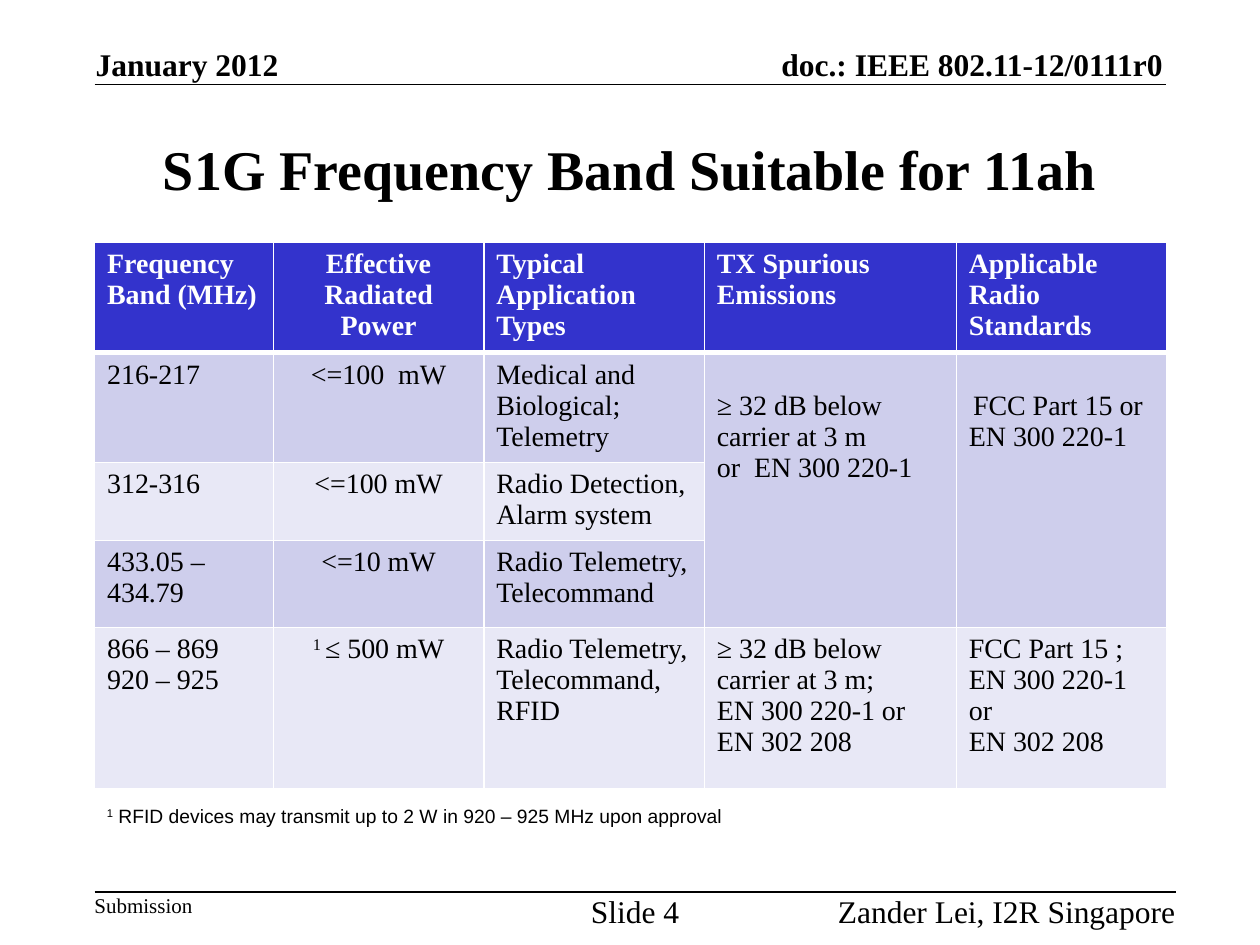
from lxml.etree import SubElement
from pptx import Presentation
from pptx.dml.color import RGBColor
from pptx.enum.shapes import MSO_CONNECTOR
from pptx.enum.text import MSO_ANCHOR, MSO_AUTO_SIZE, PP_ALIGN
from pptx.oxml.ns import qn
from pptx.util import Inches, Pt

COLORS = {"ink": "000000", "paper": "FFFFFF", "header": "3333CC",
          "odd": "CECEEC", "even": "E8E8F6"}
SERIF = "Times New Roman"
LEFT, CENTER, RIGHT = PP_ALIGN.LEFT, PP_ALIGN.CENTER, PP_ALIGN.RIGHT

BANDS = [
    ["Frequency Band (MHz)", "Effective Radiated Power", "Typical Application Types",
     "TX Spurious Emissions", "Applicable Radio Standards"],
    ["216-217", "<=100  mW", "Medical and Biological; Telemetry",
     "≥ 32 dB below carrier at 3 m\nor  EN 300 220-1", "FCC Part 15 or \nEN 300 220-1"],
    ["312-316", "<=100 mW", "Radio Detection, Alarm system", None, None],
    ["433.05 – 434.79", "<=10 mW", "Radio Telemetry, Telecommand", None, None],
    ["866 – 869\n920 – 925", ("1 ", "≤ 500 mW"), "Radio Telemetry, Telecommand, RFID",
     "≥ 32 dB below carrier at 3 m;\nEN 300 220-1 or\nEN 302 208",
     "FCC Part 15 ;\nEN 300 220-1 or\nEN 302 208"],
]
COLUMN_WIDTHS = [1.42, 1.67, 1.75, 2, 1.67]
ROW_HEIGHTS = [0.88, 0.87, 0.62, 0.69, 1.28]
POWER_COLUMN, STANDARDS_COLUMN = 1, 4
SHARED_COLUMNS = (3, 4)


def rgb(color):
    return RGBColor.from_string(COLORS[color])


def write(frame, content, align=LEFT, color="ink", **font_format):
    superscript, text = content if isinstance(content, tuple) else ("", content)
    for index, line in enumerate(text.split("\n")):
        paragraph = frame.add_paragraph() if index else frame.paragraphs[0]
        paragraph.alignment = align
        if superscript and index == 0:
            mark = paragraph.add_run()
            mark.text = superscript
            mark.font._element.set("baseline", "30000")
        paragraph.add_run().text = line
        for run in paragraph.runs:
            run.font.color.rgb = rgb(color)
            for name, value in font_format.items():
                setattr(run.font, name, value)


def add_label(slide, box, text, size=18, bold=False, align=LEFT, anchor=MSO_ANCHOR.TOP):
    frame = slide.shapes.add_textbox(*map(Inches, box)).text_frame
    frame_format = {"margin_left": 0, "margin_top": 0, "margin_right": 0,
                    "margin_bottom": 0, "word_wrap": False, "vertical_anchor": anchor,
                    "auto_size": MSO_AUTO_SIZE.SHAPE_TO_FIT_TEXT}
    for name, value in frame_format.items():
        setattr(frame, name, value)
    write(frame, text, align, name=SERIF, size=Pt(size), bold=bold)


def add_rule(slide, left, top, width):
    rule = slide.shapes.add_connector(
        MSO_CONNECTOR.STRAIGHT, *map(Inches, (left, top, left + width, top)))
    rule.line.color.rgb = rgb("ink")
    rule.line.width = Pt(1)
    SubElement(rule._element.spPr, qn("a:effectLst"))


def add_header(slide, left, top, width, height):
    add_label(slide, (left + 0.01, top, 1.47, height), "January 2012",
              bold=True, anchor=MSO_ANCHOR.BOTTOM)
    add_label(slide, (left + width - 3.58, top, 3.56, height),
              "doc.: IEEE 802.11-12/0111r0", bold=True, align=RIGHT,
              anchor=MSO_ANCHOR.BOTTOM)
    add_rule(slide, left, top + height + 0.01, width)


def add_footer(slide, left, top, width, height):
    add_rule(slide, left, top, width)
    add_label(slide, (left, top, 1, height), "Submission", size=12)
    add_label(slide, (left + width / 2 - 0.5, top, 1, height), "Slide 4", align=CENTER)
    add_label(slide, (left + width - 3, top, 3, height),
              "Zander Lei, I2R Singapore", align=RIGHT)


def set_title(slide, left, top, width, height):
    title = slide.shapes.title
    title.left, title.top, title.width, title.height = map(
        Inches, (left, top, width, height))
    frame = title.text_frame
    frame.auto_size = MSO_AUTO_SIZE.NONE
    frame.word_wrap = True
    frame.vertical_anchor = MSO_ANCHOR.MIDDLE
    write(frame, "S1G Frequency Band Suitable for 11ah", CENTER,
          name=SERIF, size=Pt(32), bold=True)


def set_borders(cell, row):
    widths = {"a:lnL": 1, "a:lnR": 1, "a:lnT": 3 if row == 1 else 1,
              "a:lnB": 3 if row == 0 else 1}
    properties = cell._tc.get_or_add_tcPr()
    for tag, width in widths.items():
        border = SubElement(properties, qn(tag), w=str(Pt(width)))
        fill = SubElement(border, qn("a:solidFill"))
        SubElement(fill, qn("a:srgbClr"), val=COLORS["paper"])


def add_band_table(slide, left, top, width, height):
    table = slide.shapes.add_table(
        len(BANDS), len(COLUMN_WIDTHS),
        *map(Inches, (left, top, width, height))).table
    for column, column_width in zip(table.columns, COLUMN_WIDTHS):
        column.width = Inches(column_width)
    for row, row_height in zip(table.rows, ROW_HEIGHTS):
        row.height = Inches(row_height)
    for row, contents in enumerate(BANDS):
        is_header = row == 0
        fill = "header" if is_header else "odd" if row % 2 else "even"
        for column, content in enumerate(contents):
            cell = table.cell(row, column)
            set_borders(cell, row)
            cell.margin_bottom = 0
            cell.fill.solid()
            cell.fill.fore_color.rgb = rgb(fill)
            if content:
                write(cell.text_frame, content,
                      CENTER if column == POWER_COLUMN else LEFT,
                      "paper" if is_header else "ink",
                      name=SERIF, size=Pt(16), bold=is_header)
    for column in SHARED_COLUMNS:
        shared = table.cell(1, column)
        shared.merge(table.cell(3, column))
        shared.margin_top = Inches(0.3)
    table.cell(1, STANDARDS_COLUMN).text_frame.paragraphs[0].alignment = CENTER


def add_footnote(slide, left, top, width, height):
    frame = slide.shapes.add_textbox(
        *map(Inches, (left, top, width, height))).text_frame
    frame.word_wrap = True
    write(frame, ("1", " RFID devices may transmit up to 2 W in 920 – 925 MHz upon approval"),
          name="Arial", size=Pt(11))


def main():
    presentation = Presentation()
    presentation.slide_width, presentation.slide_height = Inches(10), Inches(7.5)
    slide = presentation.slides.add_slide(presentation.slide_layouts[5])
    add_header(slide, 0.75, 0.36, 8.5, 0.3)
    set_title(slide, 0.75, 0.75, 8.5, 1.17)
    add_band_table(slide, 0.75, 1.92, 8.5, sum(ROW_HEIGHTS))
    add_footnote(slide, 0.75, 6.33, 8.67, 0.49)
    add_footer(slide, 0.75, 7.08, 8.58, 0.3)
    presentation.save("out.pptx")


if __name__ == "__main__":
    main()
